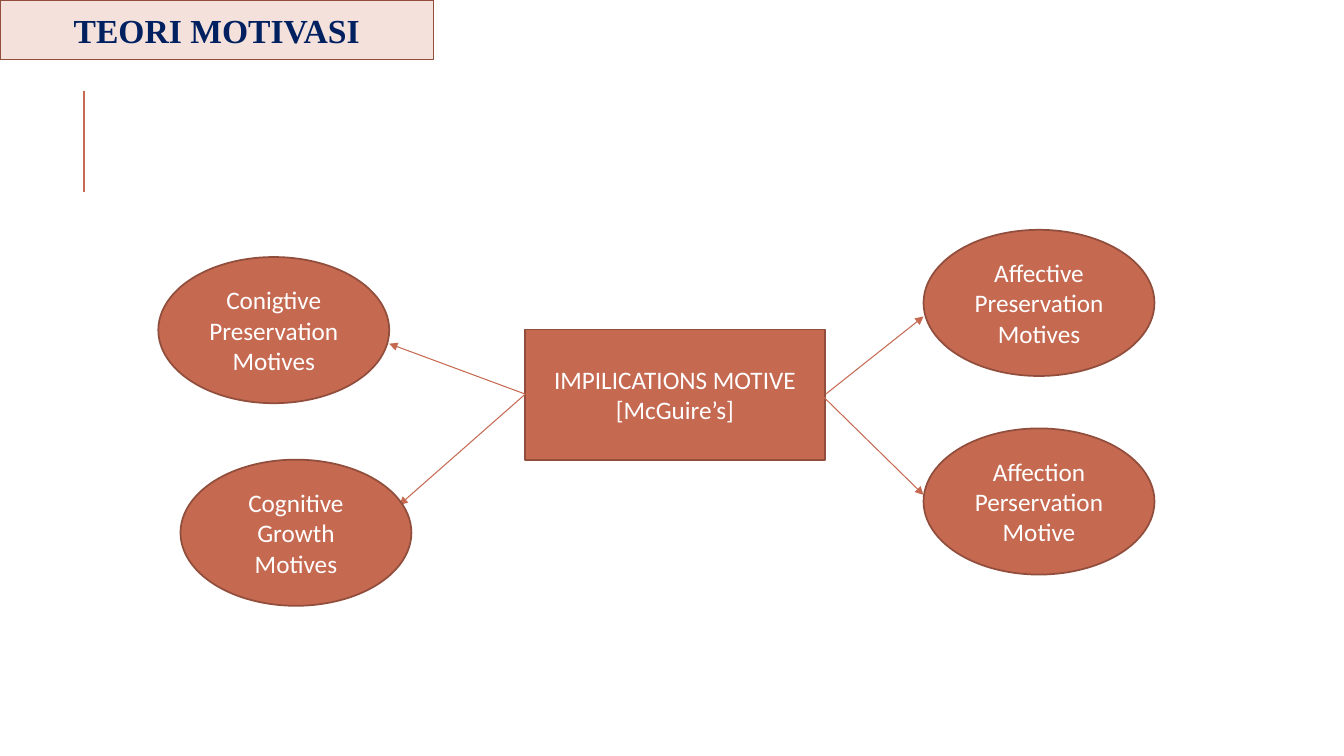
from lxml import etree
from pptx import Presentation
from pptx import util as u
from pptx.dml.color import RGBColor
from pptx.enum import shapes, text
from pptx.oxml import ns

TERRACOTTA = RGBColor(0xC6, 0x69, 0x51)
BROWN = RGBColor(0x92, 0x4E, 0x3C)
BLUSH = RGBColor(0xF4, 0xE1, 0xDC)
NAVY = RGBColor(0x00, 0x20, 0x60)
WHITE = RGBColor(0xFF, 0xFF, 0xFF)

RECT = shapes.MSO_SHAPE.RECTANGLE
OVAL = shapes.MSO_SHAPE.OVAL
OVAL_EXTENT = (2.29, 1.45)


def write(tf, content, size=18, font="Calibri", color=WHITE, bold=False):
    """Fill a text frame, one centred paragraph for each line of content."""
    tf.word_wrap = True
    tf.vertical_anchor = text.MSO_ANCHOR.MIDDLE
    for i, line in enumerate(content.split("\n")):
        p = tf.add_paragraph() if i else tf.paragraphs[0]
        p.alignment = text.PP_ALIGN.CENTER
        r = p.add_run()
        r.text = line
        r.font.size = u.Pt(size)
        r.font.name = font
        r.font.bold = bold
        r.font.color.rgb = color


class Diagram:
    """Holds the slide and its outline style."""

    def __init__(self, slide, outline=BROWN, outline_width=1.25):
        self.s = slide
        self.outline = outline
        self.outline_width = outline_width

    def box(self, kind, at, extent, content, fill=TERRACOTTA, **fmt):
        sp = self.s.shapes.add_shape(kind, *map(u.Inches, at + extent))
        sp.shadow.inherit = False
        sp.fill.solid()
        sp.fill.fore_color.rgb = fill
        sp.line.color.rgb = self.outline
        sp.line.width = u.Pt(self.outline_width)
        write(sp.text_frame, content, **fmt)

    def line(self, start, end, width=0.75, arrow=True):
        cn = self.s.shapes.add_connector(
            shapes.MSO_CONNECTOR.STRAIGHT, *map(u.Inches, start + end))
        cn.line.color.rgb = TERRACOTTA
        cn.line.width = u.Pt(width)
        sp_pr = cn._element.spPr
        if arrow:
            ln = sp_pr.find(ns.qn("a:ln"))
            etree.SubElement(ln, ns.qn("a:tailEnd"), type="triangle")
        etree.SubElement(sp_pr, ns.qn("a:effectLst"))


def main():
    prs = Presentation()
    prs.slide_width, prs.slide_height = u.Inches(13.33), u.Inches(7.5)
    d = Diagram(prs.slides.add_slide(prs.slide_layouts[6]))

    # Accent line
    d.line((0.83, 1.9), (0.83, 0.9), width=1.5, arrow=False)

    # Central theory
    d.box(RECT, (5.21, 3.27), (2.97, 1.29), "IMPILICATIONS MOTIVE\n[McGuire’s]")

    # Arrows to the motives
    for start, end in (
        ((5.21, 3.91), (3.96, 5.01)),
        ((5.21, 3.91), (3.86, 3.41)),
        ((8.19, 3.91), (9.16, 3.14)),
        ((8.14, 3.91), (9.16, 4.91)),
    ):
        d.line(start, end)

    # Motives
    for at, motive in (
        ((9.16, 2.28), "Affective Preservation Motives"),
        ((9.16, 4.25), "Affection Perservation Motive"),
        ((1.57, 2.55), "Conigtive Preservation Motives"),
        ((1.79, 4.56), "Cognitive Growth Motives"),
    ):
        d.box(OVAL, at, OVAL_EXTENT, motive)

    # Title
    d.box(RECT, (0, 0), (4.3, 0.59), "TEORI MOTIVASI", fill=BLUSH,
          size=24, font="Times New Roman", color=NAVY, bold=True)

    prs.save("out.pptx")


if __name__ == "__main__":
    main()
